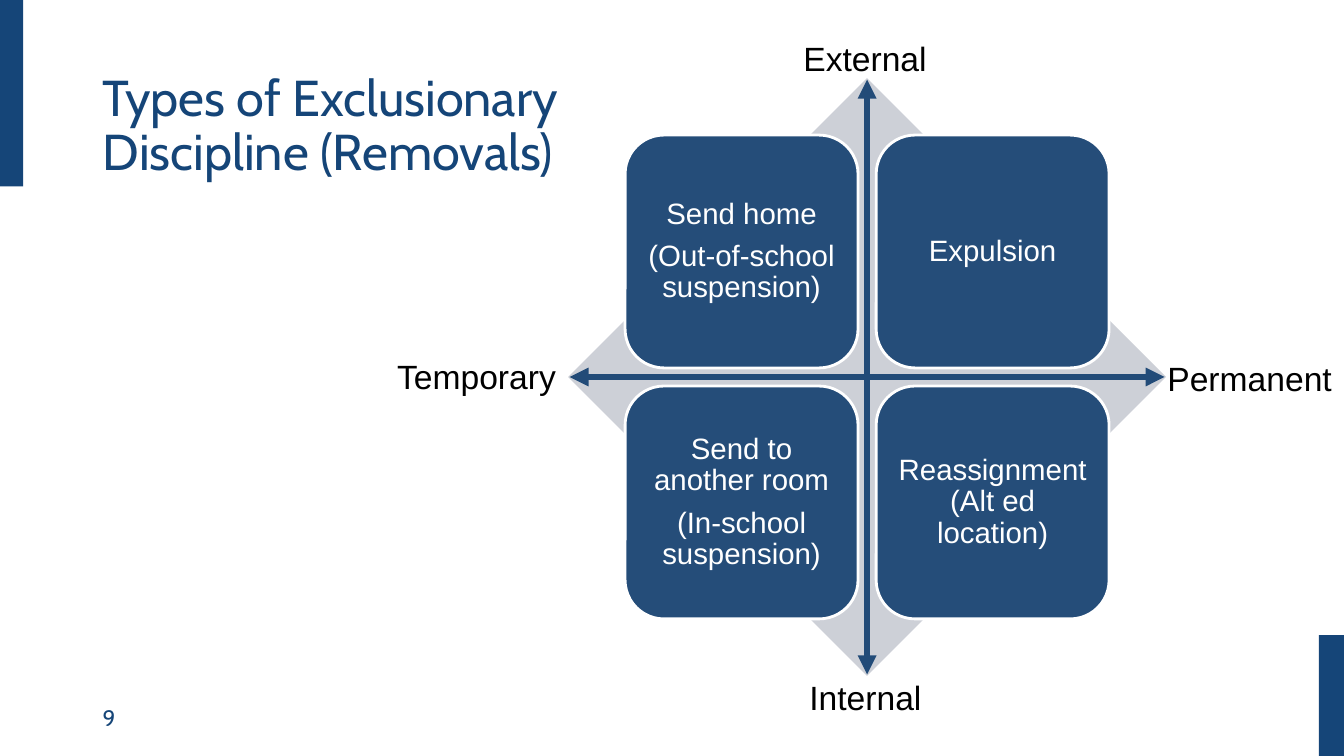
from dataclasses import dataclass

from lxml import etree
from pptx import Presentation
from pptx.dml.color import RGBColor
from pptx.enum.shapes import MSO_CONNECTOR, MSO_SHAPE
from pptx.enum.text import MSO_ANCHOR, MSO_AUTO_SIZE, PP_ALIGN
from pptx.oxml.ns import qn
from pptx.util import Inches, Pt

RECT, ROUND, DIAMOND = MSO_SHAPE.RECTANGLE, MSO_SHAPE.ROUNDED_RECTANGLE, MSO_SHAPE.DIAMOND
STRAIGHT = MSO_CONNECTOR.STRAIGHT
TOP, MIDDLE, BOTTOM = MSO_ANCHOR.TOP, MSO_ANCHOR.MIDDLE, MSO_ANCHOR.BOTTOM
LEFT, CENTER = PP_ALIGN.LEFT, PP_ALIGN.CENTER
FIXED = MSO_AUTO_SIZE.NONE


@dataclass(frozen=True)
class Theme:
    navy: str = "154578"
    tile: str = "254D79"
    axis: str = "224B78"
    pale: str = "CDD0D7"
    white: str = "FFFFFF"
    black: str = "000000"
    head: str = "Cabin"
    body: str = "Arial"
    title: float = 36
    label: float = 24
    cell: float = 21
    page: float = 16


THEME = Theme()

# Slide size, then the tile grid: first tile, tile side and step between tiles
WIDE, HIGH = 13.33, 7.5
GRID_X, GRID_Y, SIDE, STEP = 6.2, 1.34, 2.31, 2.49
MID_X = GRID_X + (SIDE + STEP) / 2
MID_Y = GRID_Y + (SIDE + STEP) / 2
SPAN = 5.93

TILES = [
    [["Send home", "(Out-of-school suspension)"], ["Expulsion"]],
    [["Send to another room", "(In-school suspension)"],
     ["Reassignment (Alt ed location)"]],
]
LABELS = [
    ("Temporary", 3.84, 3.48, 1.83),
    ("Permanent", 11.48, 3.5, 1.85),
    ("Internal", 7.93, 6.67, 1.33),
    ("External", 7.87, 0.33, 1.44),
]


def color(code):
    return RGBColor.from_string(code)


def place(x, y, w, h):
    return [Inches(n) for n in (x, y, w, h)]


def write(frame, lines, face, size, ink, align=LEFT, anchor=TOP,
          wrap=True, lead=None, gap=0):
    """Fill a text frame, one paragraph a line."""
    frame.word_wrap = wrap
    frame.auto_size = FIXED
    frame.vertical_anchor = anchor
    for i, line in enumerate(lines):
        para = frame.add_paragraph() if i else frame.paragraphs[0]
        para.text = line
        para.alignment = align
        para.space_before = Pt(0)
        para.space_after = Pt(gap)
        if lead:
            para.line_spacing = lead
        para.font.name = face
        para.font.size = Pt(size)
        para.font.color.rgb = color(ink)


def block(slide, kind, box, fill, edge=None):
    """Draw a filled shape, with an outline if an edge colour is given."""
    shape = slide.shapes.add_shape(kind, *place(*box))
    shape.shadow.inherit = False
    shape.fill.solid()
    shape.fill.fore_color.rgb = color(fill)
    if edge:
        shape.line.color.rgb = color(edge)
        shape.line.width = Pt(2)
    else:
        shape.line.fill.background()
    return shape


def tile(slide, row, col, lines):
    box = (GRID_X + col * STEP, GRID_Y + row * STEP, SIDE, SIDE)
    frame = block(slide, ROUND, box, THEME.tile, THEME.white).text_frame
    frame.margin_left = frame.margin_right = Inches(0.09)
    frame.margin_top = frame.margin_bottom = Inches(0.09)
    write(frame, lines, THEME.body, THEME.cell, THEME.white, CENTER, MIDDLE,
          lead=0.9, gap=0.35 * THEME.cell)


def axis(slide, *ends):
    """Draw a line with an arrowhead at each end."""
    line = slide.shapes.add_connector(STRAIGHT, *place(*ends))
    line.line.color.rgb = color(THEME.axis)
    line.line.width = Pt(4.5)
    props = line.line._get_or_add_ln()
    for end in ("a:headEnd", "a:tailEnd"):
        etree.SubElement(props, qn(end), type="triangle")
    etree.SubElement(props.getparent(), qn("a:effectLst"))


def label(slide, text, box, face, size, ink, **style):
    frame = slide.shapes.add_textbox(*place(*box)).text_frame
    write(frame, [text], face, size, ink, **style)


def title(slide, text):
    head = slide.shapes.title
    head.left, head.top, head.width, head.height = place(0.92, 0.5, 5.1, 1.35)
    write(head.text_frame, [text], THEME.head, THEME.title, THEME.navy,
          anchor=BOTTOM, lead=0.9)


def main():
    deck = Presentation()
    deck.slide_width, deck.slide_height = Inches(WIDE), Inches(HIGH)
    slide = deck.slides.add_slide(deck.slide_layouts[5])

    # Corner bars, page number and title
    block(slide, RECT, (-0.02, 0, 0.25, 1.85), THEME.navy)
    block(slide, RECT, (WIDE - 0.25, HIGH - 1.2, 0.25, 1.2), THEME.navy)
    label(slide, "9", (0.92, 6.92, 3, 0.4), THEME.head, THEME.page,
          THEME.navy, anchor=MIDDLE)
    title(slide, "Types of Exclusionary Discipline (Removals)")

    # Matrix of four tiles on a diamond
    half = SPAN / 2
    block(slide, DIAMOND, (MID_X - half, MID_Y - half, SPAN, SPAN), THEME.pale)
    for row, cells in enumerate(TILES):
        for col, lines in enumerate(cells):
            tile(slide, row, col, lines)

    # Axes and their labels
    reach = 2.95
    axis(slide, MID_X - reach, MID_Y, MID_X + reach, MID_Y)
    axis(slide, MID_X, MID_Y - reach, MID_X, MID_Y + reach)
    for text, x, y, w in LABELS:
        label(slide, text, (x, y, w, 0.5), THEME.body, THEME.label,
              THEME.black, wrap=False)

    deck.save("out.pptx")


if __name__ == "__main__":
    main()
